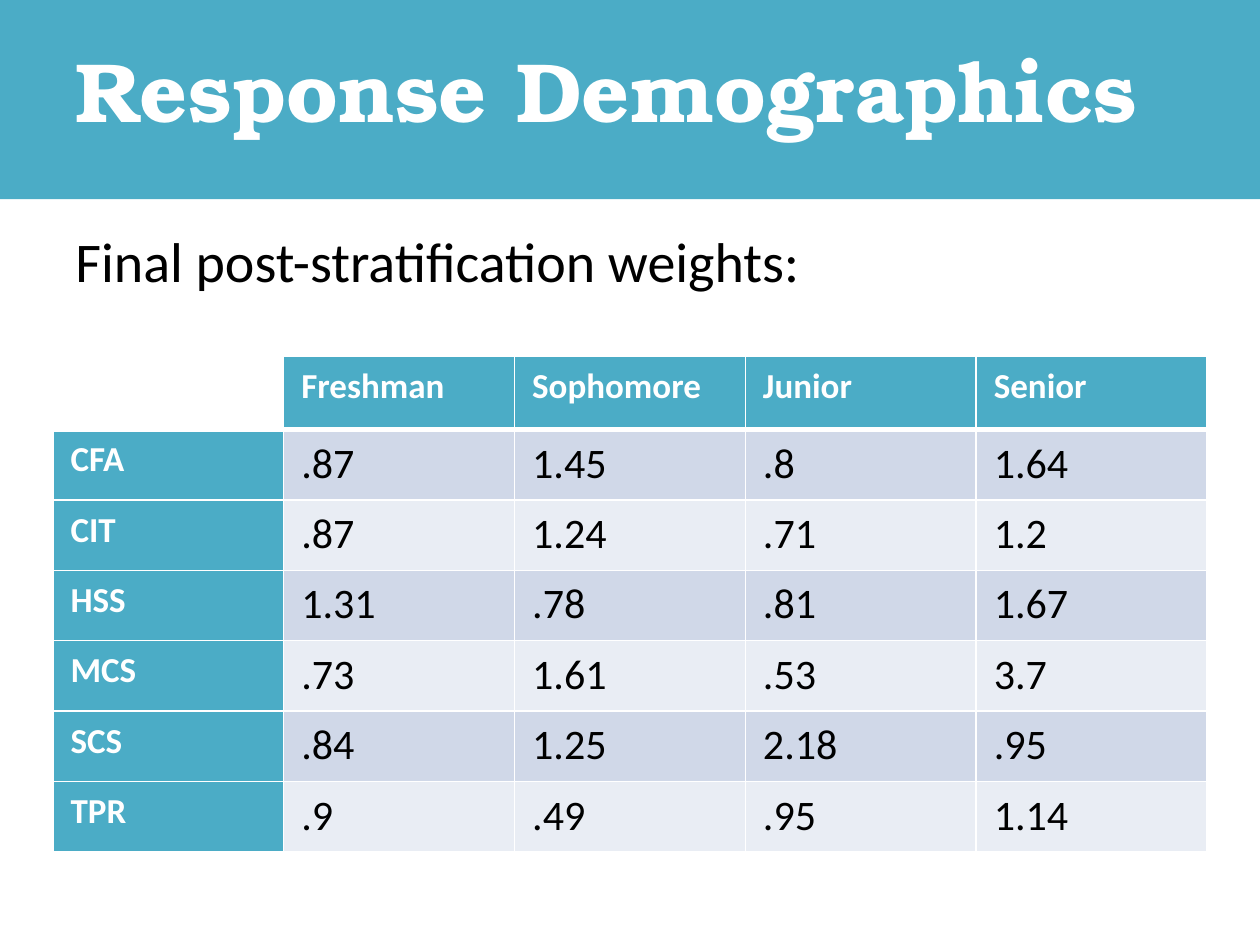
"""Build the response demographics slide with its table of weights."""
from dataclasses import dataclass

from lxml.etree import SubElement as Sub
from pptx import Presentation
from pptx.dml.color import RGBColor as Rgb
from pptx.enum.shapes import MSO_SHAPE as Shape
from pptx.enum.text import MSO_ANCHOR as Anchor
from pptx.oxml.ns import qn
from pptx.slide import Slide
from pptx.table import _Cell as Cell
from pptx.text.text import TextFrame as Frame
from pptx.util import Inches, Pt


@dataclass(frozen=True)
class Font:
    name: str
    size: int
    color: str
    bold: bool = False


@dataclass(frozen=True)
class Theme:
    teal: str = "4BACC6"
    white: str = "FFFFFF"
    bands: tuple[str, str] = ("D0D8E8", "E9EDF4")
    title: Font = Font("TeX Gyre Bonum", 48, "FFFFFF", True)
    lead: Font = Font("Calibri", 32, "000000")
    head: Font = Font("Calibri", 20, "FFFFFF", True)
    value: Font = Font("Calibri", 24, "000000")
    rule: int = 1
    thick: int = 3


@dataclass(frozen=True)
class Box:
    left: float
    top: float
    width: float
    height: float

    def place(self) -> tuple[int, ...]:
        return tuple(map(Inches, (self.left, self.top, self.width, self.height)))


@dataclass(frozen=True)
class Label:
    text: str
    box: Box
    font: Font
    anchor: Anchor


THEME = Theme()
LABELS = (
    Label("Response Demographics", Box(0.5, 0.08, 9, 1.25), THEME.title, Anchor.MIDDLE),
    Label("Final post-stratification weights:", Box(0.5, 1.75, 9, 4.95), THEME.lead, Anchor.TOP),
)
WEIGHTS = (
    ("", "Freshman", "Sophomore", "Junior", "Senior"),
    ("CFA", ".87", "1.45", ".8", "1.64"),
    ("CIT", ".87", "1.24", ".71", "1.2"),
    ("HSS", "1.31", ".78", ".81", "1.67"),
    ("MCS", ".73", "1.61", ".53", "3.7"),
    ("SCS", ".84", "1.25", "2.18", ".95"),
    ("TPR", ".9", ".49", ".95", "1.14"),
)
GRID = Box(0.42, 2.83, 9.16, 3.93)
HEAD_ROW = 0.58


def write(frame: Frame, text: str, font: Font) -> None:
    frame.text = text
    for run in frame.paragraphs[0].runs:
        run.font.name = font.name
        run.font.size = Pt(font.size)
        run.font.bold = font.bold
        run.font.color.rgb = Rgb.from_string(font.color)


def add_band(slide: Slide, box: Box) -> None:
    band = slide.shapes.add_shape(Shape.RECTANGLE, *box.place())
    band.shadow.inherit = False
    band.fill.solid()
    band.fill.fore_color.rgb = Rgb.from_string(THEME.teal)
    band.line.fill.background()


def add_label(slide: Slide, label: Label) -> None:
    frame = slide.shapes.add_textbox(*label.box.place()).text_frame
    frame.word_wrap = True
    frame.vertical_anchor = label.anchor
    write(frame, label.text, label.font)


def add_rules(cell: Cell, base: int) -> None:
    props = cell._tc.get_or_add_tcPr()
    for side in "LRTB":
        width = base if side == "B" else THEME.rule
        line = Sub(props, qn(f"a:ln{side}"), w=str(Pt(width)))
        fill = Sub(line, qn("a:solidFill"))
        Sub(fill, qn("a:srgbClr"), val=THEME.white)


def style(cell: Cell, row: int, col: int, text: str) -> None:
    head = row == 0 or col == 0
    add_rules(cell, THEME.rule if row else THEME.thick)
    cell.margin_left = cell.margin_right = Inches(0.14)
    cell.margin_top = cell.margin_bottom = Inches(0.07)
    color = THEME.teal if head else THEME.bands[(row - 1) % 2]
    cell.fill.solid()
    cell.fill.fore_color.rgb = Rgb.from_string(color if text else THEME.white)
    write(cell.text_frame, text, THEME.head if head else THEME.value)


def add_grid(slide: Slide, data: tuple[tuple[str, ...], ...], box: Box) -> None:
    rows, cols = len(data), len(data[0])
    table = slide.shapes.add_table(rows, cols, *box.place()).table
    for col in table.columns:
        col.width = Inches(box.width / cols)
    for row in table.rows:
        row.height = Inches((box.height - HEAD_ROW) / (rows - 1))
    table.rows[0].height = Inches(HEAD_ROW)
    for r, line in enumerate(data):
        for c, text in enumerate(line):
            style(table.cell(r, c), r, c, text)


def main() -> None:
    deck = Presentation()
    deck.slide_width, deck.slide_height = Inches(10), Inches(7.5)
    slide = deck.slides.add_slide(deck.slide_layouts[6])
    add_band(slide, Box(0, 0, 10, 1.58))
    for label in LABELS:
        add_label(slide, label)
    add_grid(slide, WEIGHTS, GRID)
    deck.save("out.pptx")


if __name__ == "__main__":
    main()
